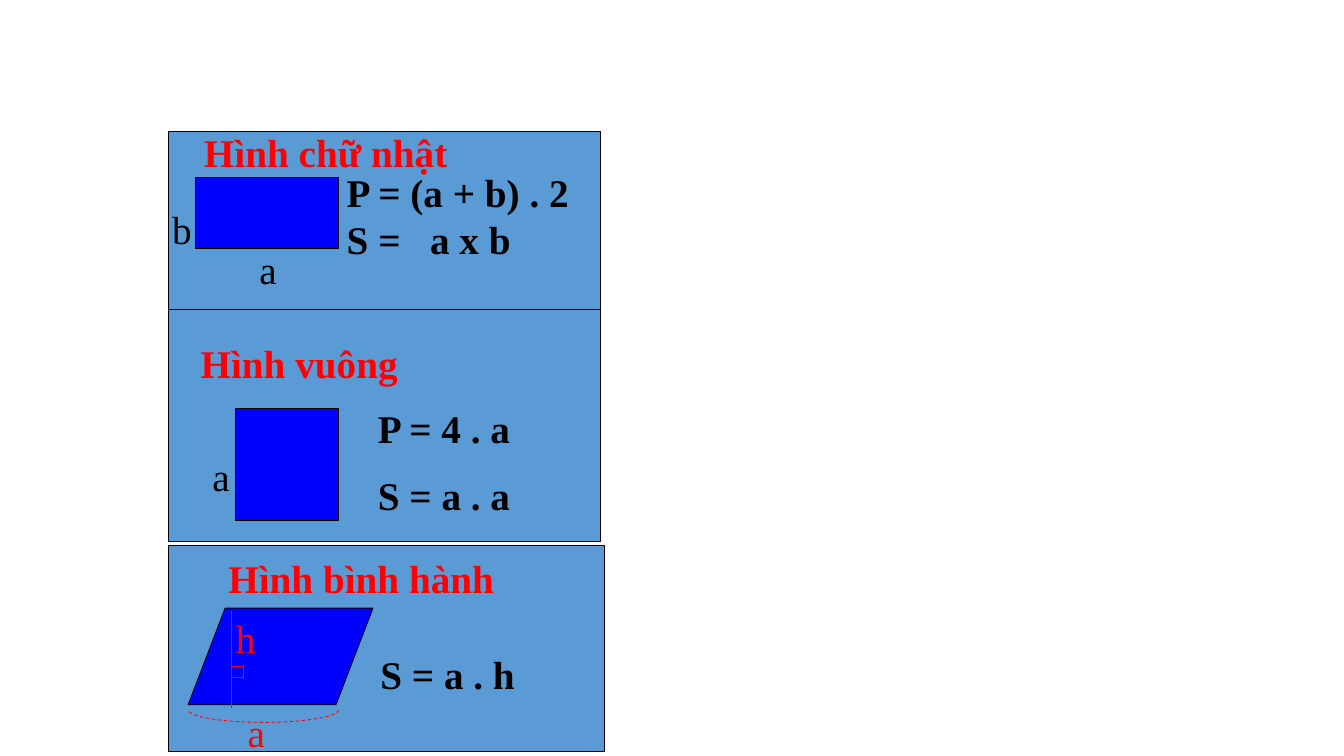
from lxml import etree
from pptx import Presentation
from pptx import util as u
from pptx.dml.color import RGBColor
from pptx.enum import dml, shapes, text
from pptx.oxml.ns import qn

PX = 9144  # 100 px to the inch
HUES = {"panel": "5B9BD5", "blue": "0000FF", "red": "FF0000", "black": "000000"}
KIND = shapes.MSO_SHAPE

deck = Presentation()
deck.slide_width, deck.slide_height = 1600 * PX, 900 * PX
slide = deck.slides.add_slide(deck.slide_layouts[6])


def draw(kind, box, fill, line):
    form = slide.shapes.add_shape(kind, *[n * PX for n in box])
    form.shadow.inherit = False
    if fill:
        form.fill.solid()
        form.fill.fore_color.rgb = RGBColor.from_string(HUES[fill])
    else:
        form.fill.background()
    form.line.color.rgb = RGBColor.from_string(HUES[line])
    form.line.width = u.Pt(0.75)
    return form


def write(words, box, hue, bold, gap=0):
    frame = slide.shapes.add_textbox(*[n * PX for n in box]).text_frame
    frame.word_wrap = True
    frame.auto_size = text.MSO_AUTO_SIZE.SHAPE_TO_FIT_TEXT
    frame.text = words
    for row, para in enumerate(frame.paragraphs):
        para.space_before = u.Pt(gap if row else 0)
        font = para.runs[0].font
        font.name, font.size, font.bold = "Times New Roman", u.Pt(33.6), bold
        font.color.rgb = RGBColor.from_string(HUES[hue])


# Panels
for box in [(200, 157, 515, 211), (200, 368, 515, 277), (200, 649, 519, 246)]:
    draw(KIND.RECTANGLE, box, "panel", "black")

# Rectangle, square and parallelogram
draw(KIND.RECTANGLE, (233, 211, 170, 85), "blue", "black")
draw(KIND.RECTANGLE, (280, 486, 123, 134), "blue", "black")
draw(KIND.FLOWCHART_DATA, (224, 724, 220, 115), "blue", "black")

# Height with its right angle
height = slide.shapes.add_connector(
    shapes.MSO_CONNECTOR.STRAIGHT, 275 * PX, 727 * PX, 275 * PX, 843 * PX)
height.line.color.rgb = RGBColor.from_string(HUES["red"])
height.line.width = u.Pt(0.75)
etree.SubElement(height._element.spPr, qn("a:effectLst"))
draw(KIND.RECTANGLE, (276, 793, 14, 14), "blue", "red")

# Dashed arc under the base, from 0 to 180 degrees
arc = draw(KIND.ARC, (224, 830, 179, 30), None, "red")
arc.adjustments[0] = 0
arc.adjustments[1] = 180 * 0.6
arc.line.dash_style = dml.MSO_LINE.DASH

# Headings
for words, box in [
    ("Hình chữ nhật", (233, 148, 321, 67)),
    ("Hình vuông", (229, 399, 281, 67)),
    ("Hình bình hành", (262, 655, 397, 67)),
]:
    write(words, box, "red", True)

# Side labels
for words, box, hue in [
    ("a", (299, 287, 66, 67), "black"),
    ("b", (195, 240, 47, 67), "black"),
    ("a", (243, 533, 57, 67), "black"),
    ("h", (271, 727, 69, 67), "red"),
    ("a", (285, 838, 69, 67), "red"),
]:
    write(words, box, hue, False)

# Formulas
for words, box, gap in [
    ("P = (a + b) . 2\nS =   a x b", (403, 195, 317, 123), 0),
    ("P = 4 . a\nS = a . a", (440, 476, 220, 151), 17),
    ("S = a . h", (443, 769, 234, 67), 0),
]:
    write(words, box, "black", True, gap)

deck.save("out.pptx")
